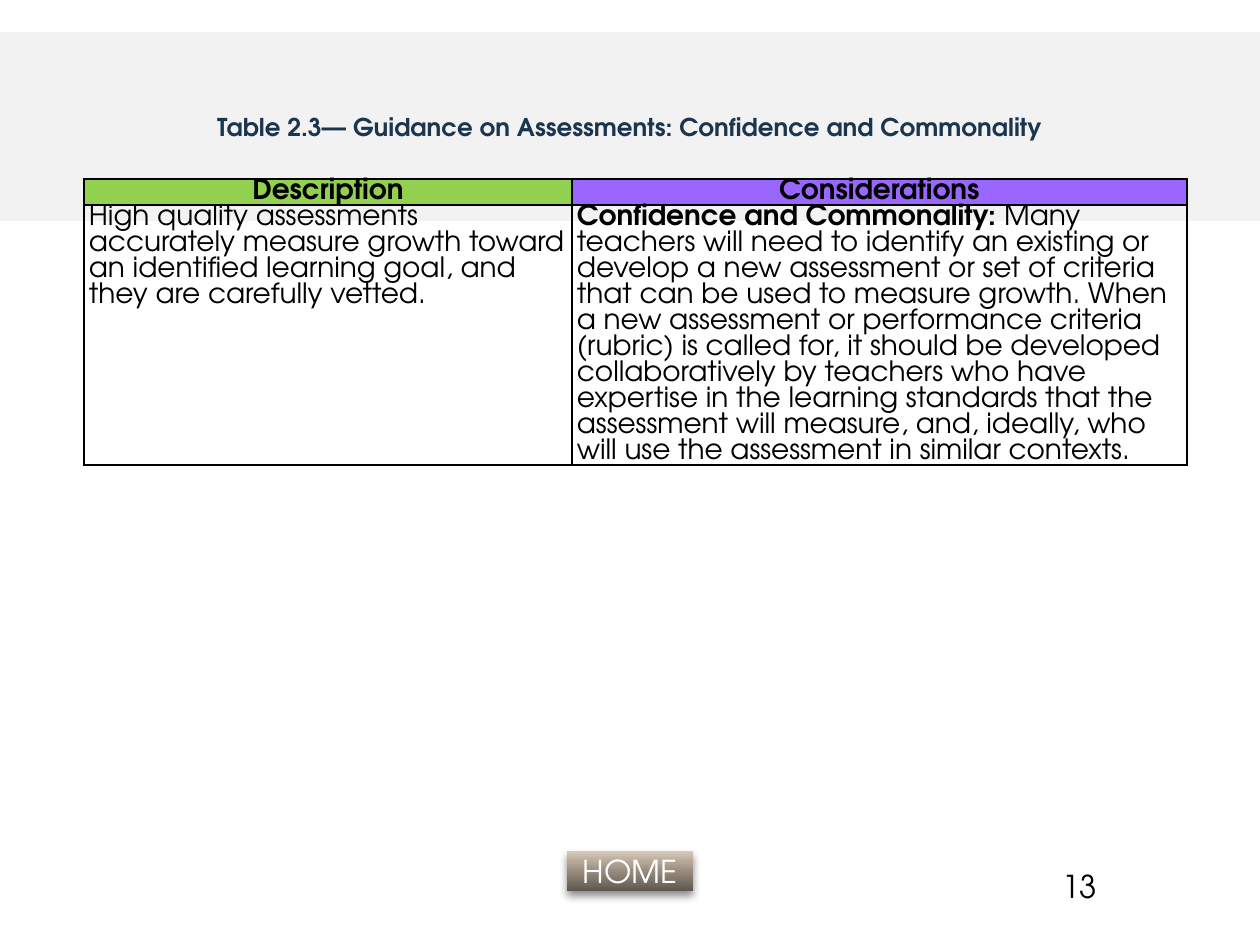
"""Build the slide on assessment confidence and commonality."""
import lxml.etree
import pptx
import pptx.dml.color
import pptx.enum.shapes
import pptx.enum.text
import pptx.oxml
import pptx.oxml.ns
import pptx.util

RGB = pptx.dml.color.RGBColor
BLACK = RGB(0x00, 0x00, 0x00)
WHITE = RGB(0xFF, 0xFF, 0xFF)
NAVY = RGB(0x1A, 0x35, 0x4D)
PALE_GREY = RGB(0xF2, 0xF2, 0xF2)
GREEN = RGB(0x92, 0xD0, 0x50)
PURPLE = RGB(0x99, 0x66, 0xFF)
BRONZE = (
    (0, RGB(0x5F, 0x57, 0x4E)),
    (50, RGB(0x98, 0x8C, 0x7E)),
    (70, RGB(0xB2, 0xA5, 0x96)),
    (100, RGB(0xD8, 0xCA, 0xB8)),
)
FONT = "TeX Gyre Adventor"
PX_PER_INCH = 126
LINE_PITCH = pptx.util.Pt(14.86)
CENTER = pptx.enum.text.PP_ALIGN.CENTER
LEFT = pptx.enum.text.PP_ALIGN.LEFT
MIDDLE = pptx.enum.text.MSO_ANCHOR.MIDDLE
DRAWING_NS = pptx.oxml.ns.nsdecls("a")

COLUMNS = (
    ("Description", GREEN, 488, [
        ("High quality assessments accurately measure growth toward an identified "
         "learning goal, and they are carefully vetted.", False),
    ]),
    ("Considerations", PURPLE, 615, [
        ("Confidence and Commonality: ", True),
        ("Many teachers will need to identify an existing or develop a new assessment "
         "or set of criteria that can be used to measure growth. When a new assessment "
         "or performance criteria (rubric) is called for, it should be developed "
         "collaboratively by teachers who have expertise in the learning standards that "
         "the assessment will measure, and, ideally, who will use the assessment in "
         "similar contexts.", False),
    ]),
)
ROW_HEIGHTS = (26, 260)


def px(length):
    """Turn a length in px into EMU."""
    return pptx.util.Emu(round(length * pptx.util.Inches(1) / PX_PER_INCH))


def box(left, top, width, height):
    """Turn a px box into EMU values."""
    return [px(length) for length in (left, top, width, height)]


def write(frame, runs, size, color, align=LEFT):
    """Write (text, bold) runs into the first paragraph and return it."""
    paragraph = frame.paragraphs[0]
    paragraph.alignment = align
    for text, bold in runs:
        run = paragraph.add_run()
        run.text = text
        run.font.name = FONT
        run.font.size = pptx.util.Pt(size)
        run.font.bold = bold
        run.font.color.rgb = color
    return paragraph


def add_title(slide, text):
    """Place the heading band in the title placeholder."""
    title = slide.shapes.title
    title.left, title.top, title.width, title.height = box(0, 32, 1260, 189)
    title.fill.solid()
    title.fill.fore_color.rgb = PALE_GREY
    title.text_frame.vertical_anchor = MIDDLE
    title.text_frame.auto_size = pptx.enum.text.MSO_AUTO_SIZE.NONE
    write(title.text_frame, [(text, True)], 14, NAVY, CENTER)


def add_button(slide, text):
    """Add the bronze button with its soft shadow."""
    kind = pptx.enum.shapes.MSO_SHAPE.ACTION_BUTTON_CUSTOM
    button = slide.shapes.add_shape(kind, *box(567, 851, 126, 40))
    button.line.fill.background()
    stops = "".join(
        f'<a:gs pos="{position * 1000}"><a:srgbClr val="{color}"/></a:gs>'
        for position, color in BRONZE
    )
    gradient = pptx.oxml.parse_xml(
        f'<a:gradFill {DRAWING_NS} rotWithShape="1"><a:gsLst>{stops}</a:gsLst>'
        '<a:lin ang="16200000" scaled="0"/></a:gradFill>'
    )
    shadow = pptx.oxml.parse_xml(
        f'<a:effectLst {DRAWING_NS}><a:outerShdw blurRad="{pptx.util.Pt(5)}" '
        f'dist="{pptx.util.Pt(3)}" dir="5400000" rotWithShape="0">'
        f'<a:srgbClr val="{BLACK}"><a:alpha val="45000"/></a:srgbClr>'
        '</a:outerShdw></a:effectLst>'
    )
    properties = button.element.spPr
    properties.find(pptx.oxml.ns.qn("a:prstGeom")).addnext(gradient)
    properties.append(shadow)
    frame = button.text_frame
    frame.vertical_anchor = MIDDLE
    frame.word_wrap = False
    write(frame, [(text, False)], 18, WHITE, CENTER)


def add_borders(cell):
    """Rule all four sides of a cell in black."""
    properties = cell._tc.get_or_add_tcPr()
    for side in ("lnL", "lnR", "lnT", "lnB"):
        properties.append(pptx.oxml.parse_xml(
            f'<a:{side} {DRAWING_NS} w="{pptx.util.Pt(1)}"><a:solidFill>'
            f'<a:srgbClr val="{BLACK}"/></a:solidFill></a:{side}>'
        ))


def fill_cell(cell, runs, align=LEFT, color=None):
    """Format one table cell and write its runs."""
    cell.margin_left = cell.margin_right = px(5)
    cell.margin_top = cell.margin_bottom = 0
    add_borders(cell)
    if color is None:
        cell.fill.background()
    else:
        cell.fill.solid()
        cell.fill.fore_color.rgb = color
    write(cell.text_frame, runs, 16, BLACK, align).line_spacing = LINE_PITCH


def add_guidance_table(slide):
    """Add the guidance table, one column per topic."""
    width = sum(column[2] for column in COLUMNS)
    frame = slide.shapes.add_table(
        len(ROW_HEIGHTS), len(COLUMNS), *box(84, 179, width, sum(ROW_HEIGHTS)))
    table = frame.table
    table.first_row = table.horz_banding = False
    for row, height in zip(table.rows, ROW_HEIGHTS):
        row.height = px(height)
    for index, (heading, color, column_width, guidance) in enumerate(COLUMNS):
        table.columns[index].width = px(column_width)
        fill_cell(table.cell(0, index), [(heading, True)], CENTER, color)
        fill_cell(table.cell(1, index), guidance)


def add_page_number(slide, number):
    """Add the page number at the lower right."""
    frame = slide.shapes.add_textbox(*box(1050, 861, 147, 66)).text_frame
    frame.word_wrap = True
    write(frame, [(number, False)], 18, BLACK)


def main():
    """Build and save the slide."""
    deck = pptx.Presentation()
    deck.slide_width, deck.slide_height = px(1260), px(945)
    slide = deck.slides.add_slide(deck.slide_layouts[5])
    add_title(slide, "Table 2.3— Guidance on Assessments: Confidence and Commonality")
    add_button(slide, "HOME")
    add_guidance_table(slide)
    add_page_number(slide, "13")
    deck.save("out.pptx")


if __name__ == "__main__":
    main()
